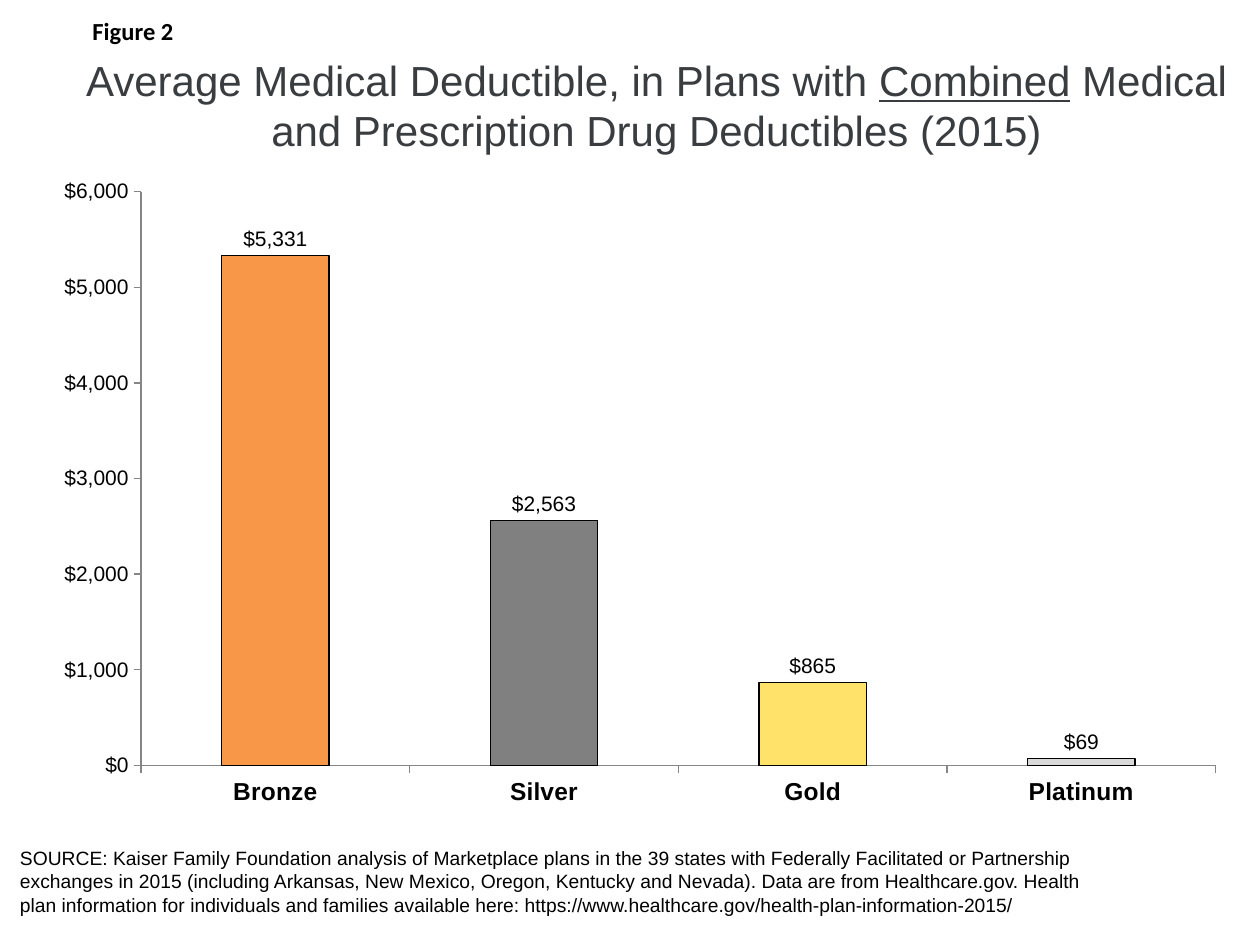
from lxml import etree
from pptx import Presentation
from pptx.chart.data import CategoryChartData
from pptx.dml.color import RGBColor
from pptx.enum.chart import XL_CHART_TYPE as ChartType, XL_LABEL_POSITION as LabelPos
from pptx.enum.chart import XL_TICK_MARK as TickMark
from pptx.enum.text import MSO_ANCHOR as Anchor, PP_ALIGN as Align
from pptx.oxml.ns import qn
from pptx.util import Inches, Pt

BLACK = RGBColor(0x00, 0x00, 0x00)
SLATE = RGBColor(0x39, 0x3D, 0x40)
AXIS_GRAY = RGBColor(0x86, 0x86, 0x86)
ORANGE = RGBColor(0xF7, 0x97, 0x47)
GRAY = RGBColor(0x80, 0x80, 0x80)
YELLOW = RGBColor(0xFE, 0xE2, 0x6A)
LIGHT_GRAY = RGBColor(0xD9, 0xD9, 0xD9)
DOLLARS = '"$"#,##0'


def add_text(slide, text, left, top, width, height, size, font="Arial",
             color=BLACK, bold=False, align=Align.LEFT, anchor=Anchor.TOP,
             underlined=""):
    """Add a one-paragraph text box, underlining one phrase if given."""
    frame = slide.shapes.add_textbox(Inches(left), Inches(top),
                                     Inches(width), Inches(height)).text_frame
    frame.word_wrap = True
    frame.vertical_anchor = anchor
    paragraph = frame.paragraphs[0]
    paragraph.alignment = align
    pieces = text.partition(underlined) if underlined else [text]
    for piece in pieces:
        run = paragraph.add_run()
        run.text = piece
        run.font.name = font
        run.font.size = Pt(size)
        run.font.bold = bold
        run.font.color.rgb = color
        if piece == underlined:
            run.font.underline = True


prs = Presentation()
prs.slide_width, prs.slide_height = Inches(10), Inches(7.5)
slide = prs.slides.add_slide(prs.slide_layouts[6])

# Source note
add_text(slide,
         "SOURCE: Kaiser Family Foundation analysis of Marketplace plans in the 39 "
         "states with Federally Facilitated or Partnership exchanges in 2015 "
         "(including Arkansas, New Mexico, Oregon, Kentucky and Nevada). Data are "
         "from Healthcare.gov. Health plan information for individuals and families "
         "available here: https://www.healthcare.gov/health-plan-information-2015/",
         0.06, 6.67, 8.78, 0.66, size=11)

# Deductible chart: one bar per metal tier
tiers = [("Bronze", 5331, ORANGE), ("Silver", 2563, GRAY),
         ("Gold", 865, YELLOW), ("Platinum", 69, LIGHT_GRAY)]
deductibles = CategoryChartData(number_format=DOLLARS)
deductibles.categories = [name for name, _, _ in tiers]
deductibles.add_series("Series 1", [value for _, value, _ in tiers])
chart = slide.shapes.add_chart(ChartType.COLUMN_CLUSTERED, Inches(0.33), Inches(1.33),
                               Inches(9.52), Inches(5.17), deductibles).chart
chart.has_legend = False
chart.has_title = False
chart.font.name = "Arial"
chart.font.size = Pt(18)
chart.font.color.rgb = BLACK

# Bars and their value labels
plot = chart.plots[0]
plot.gap_width = 150
plot.vary_by_categories = False
bars = plot.series[0]
for index, (_, _, color) in enumerate(tiers):
    bar = bars.points[index].format
    bar.fill.solid()
    bar.fill.fore_color.rgb = color
    bar.line.color.rgb = BLACK
    bar.line.width = Pt(0.75)
labels = bars.data_labels
labels.show_value = True
labels.position = LabelPos.OUTSIDE_END
labels.number_format = DOLLARS
labels.number_format_is_linked = False
labels.font.size = Pt(12)

# Axes
tier_axis, dollar_axis = chart.category_axis, chart.value_axis
for axis, size, bold in [(tier_axis, 14, True), (dollar_axis, 12, False)]:
    axis.has_major_gridlines = False
    axis.major_tick_mark = TickMark.OUTSIDE
    axis.minor_tick_mark = TickMark.NONE
    axis.format.line.color.rgb = AXIS_GRAY
    axis.format.line.width = Pt(0.75)
    axis.tick_labels.font.size = Pt(size)
    axis.tick_labels.font.bold = bold
dollar_axis.minimum_scale, dollar_axis.maximum_scale = 0, 6000
dollar_axis.major_unit = 1000
dollar_axis.tick_labels.number_format = DOLLARS
dollar_axis.tick_labels.number_format_is_linked = False

# Fixed plot area, as fractions of the chart
plot_area = plot_area = chart.element.find(".//" + qn("c:plotArea"))
layout = plot_area.find(qn("c:layout"))
if layout is None:
    layout = etree.Element(qn("c:layout"))
    plot_area.insert(0, layout)
manual = etree.SubElement(layout, qn("c:manualLayout"))
for tag, value in [("layoutTarget", "inner"), ("xMode", "edge"), ("yMode", "edge"),
                   ("x", "0.083"), ("y", "0.037"), ("w", "0.896"), ("h", "0.881")]:
    etree.SubElement(manual, qn("c:" + tag)).set("val", value)

# Title and figure number
add_text(slide,
         "Average Medical Deductible, in Plans with Combined Medical and "
         "Prescription Drug Deductibles (2015)",
         0.52, 0.33, 9.38, 1, size=24, color=SLATE, align=Align.CENTER,
         anchor=Anchor.MIDDLE, underlined="Combined")
add_text(slide, "Figure 2", 0.18, 0.08, 1.75, 0.34, size=14, font="Calibri",
         bold=True, align=Align.CENTER)

prs.save("out.pptx")
